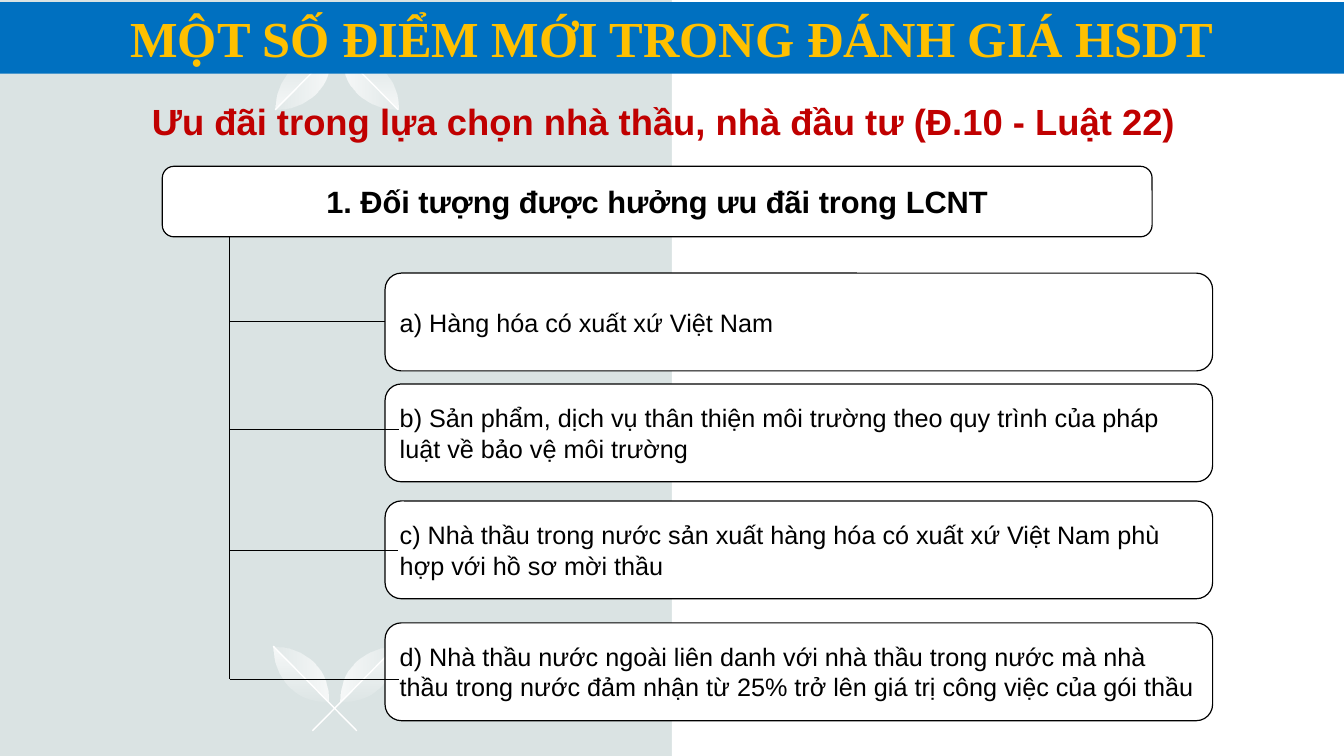
from lxml.etree import SubElement
from pptx import Presentation
from pptx.dml.color import RGBColor
from pptx.enum.shapes import MSO_CONNECTOR as Line, MSO_SHAPE as Shape
from pptx.enum.text import MSO_ANCHOR as Anchor, MSO_AUTO_SIZE as Fit, PP_ALIGN as Align
from pptx.oxml.ns import qn
from pptx.util import Inches, Pt

WIDE, HIGH = 40 / 3, 7.5
TITLE = "MỘT SỐ ĐIỂM MỚI TRONG ĐÁNH GIÁ HSDT"
TOPIC = "Ưu đãi trong lựa chọn nhà thầu, nhà đầu tư (Đ.10 - Luật 22)"
HEAD = "1. Đối tượng được hưởng ưu đãi trong LCNT"
ITEMS = [
    (2.71, 3.19, 3.82, "a) Hàng hóa có xuất xứ Việt Nam"),
    (3.81, 4.26, 3.96, "b) Sản phẩm, dịch vụ thân thiện môi trường theo quy trình "
     "của pháp luật về bảo vệ môi trường"),
    (4.97, 5.46, 3.95, "c) Nhà thầu trong nước sản xuất hàng hóa có xuất xứ Việt Nam "
     "phù hợp với hồ sơ mời thầu"),
    (6.18, 6.74, 3.96, "d) Nhà thầu nước ngoài liên danh với nhà thầu trong nước mà nhà "
     "thầu trong nước đảm nhận từ 25% trở lên giá trị công việc của gói thầu"),
]
LEAF = [(0, 0), (0.14, 0), (0.29, 0.05), (0.4, 0.16),
        (0.51, 0.26), (0.55, 0.41), (0.55, 0.55)]


def paint(part, color):
    """Give a fill, a font or a gradient stop a hex colour."""
    if hasattr(part, "solid"):
        part.solid()
        part.fore_color.rgb = RGBColor.from_string(color)
    else:
        part.color.rgb = RGBColor.from_string(color)


def write(shape, text, size, color="000000", bold=False, align=Align.LEFT,
          font="Arial", anchor=Anchor.MIDDLE):
    """Put one formatted paragraph in a shape."""
    frame = shape.text_frame
    frame.word_wrap = True
    frame.auto_size = Fit.NONE
    frame.vertical_anchor = anchor
    para = frame.paragraphs[0]
    para.text = text
    para.alignment = align
    para.line_spacing = 1.0
    para.font.size, para.font.bold, para.font.name = Pt(size), bold, font
    paint(para.font, color)


def block(slide, box, kind, color, edge=None):
    """Add a filled shape, outlined when an edge colour is given."""
    shape = slide.shapes.add_shape(kind, *map(Inches, box))
    shape.shadow.inherit = False
    paint(shape.fill, color)
    if edge:
        paint(shape.line.fill, edge)
        shape.line.width = Pt(0.85)
    else:
        shape.line.fill.background()
    return shape


def rule(slide, start, end, color="000000", width=0.75):
    """Draw a straight line between two points."""
    line = slide.shapes.add_connector(Line.STRAIGHT, *map(Inches, (*start, *end)))
    paint(line.line.fill, color)
    line.line.width = Pt(width)
    SubElement(line._element.spPr, qn("a:effectLst"))
    return line


def curve(shape):
    """Turn each three straight segments of an outline into one cubic curve."""
    steps = list(shape._element.iter(qn("a:lnTo")))
    for first, *rest in zip(steps[::3], steps[1::3], steps[2::3]):
        cubic = first.makeelement(qn("a:cubicBezTo"))
        first.addprevious(cubic)
        for step in (first, *rest):
            cubic.append(step[0])
            step.getparent().remove(step)


def blade(slide, points, angle, fade):
    """Draw half a leaf in white that fades along an angle."""
    spots = [(Inches(x), Inches(y)) for x, y in points]
    pen = slide.shapes.build_freeform(*spots[0])
    pen.add_line_segments(spots[1:], close=True)
    shape = pen.convert_to_shape()
    curve(shape)
    shape.shadow.inherit = False
    shape.line.fill.background()
    shape.fill.gradient()
    shape.fill.gradient_angle = angle
    for stop in shape.fill.gradient_stops:
        paint(stop, "FFFFFF")
    for tone, alpha in zip(shape._element.iter(qn("a:srgbClr")), (80, fade)):
        SubElement(tone, qn("a:alpha"), val=str(alpha * 1000))
    return shape


def sprig(slide, mid, top, down):
    """Draw two mirrored leaves with crossing stems, tips level with top."""
    parts = []
    for side in (1, -1):
        tip = mid + side * 0.61

        def place(u, v):
            """Map an offset from the leaf tip to the slide."""
            return tip - side * u, top + down * v

        parts += [
            blade(slide, [place(u, v) for u, v in LEAF], 0 if side > 0 else 180, 20),
            blade(slide, [place(v, u) for u, v in LEAF], 270 if down > 0 else 90, 10),
            rule(slide, place(0.83, 0.84), place(0, 0), "FFFFFF", 1),
        ]
    slide.shapes.add_group_shape(parts)


def backdrop(slide, box):
    """Give the layout a grey ground, a white right half and two sprigs."""
    left, top, width, height = box
    layout = slide.slide_layout
    paint(layout.background.fill, "DAE3E3")
    block(slide, (left + width / 2, top, width / 2, height), Shape.RECTANGLE, "FFFFFF")
    sprig(slide, left + 3.32, top + 6.41, 1)
    sprig(slide, left + 3.34, top + 1.09, -1)
    for shape in list(slide.shapes):
        if not shape.is_placeholder:
            for tag in shape._element.iter(qn("p:cNvPr")):
                tag.set("id", str(int(tag.get("id")) + 100))
            layout.shapes._spTree.append(shape._element)


def topic(slide, box):
    """Add the red subtitle."""
    text = slide.shapes.add_textbox(*map(Inches, box))
    write(text, TOPIC, 26, "C00000", True, Align.CENTER, anchor=Anchor.TOP)


def tree(slide, box):
    """Draw the head box, its four items and the lines that join them."""
    left, top, width, _ = box
    head = block(slide, (left, top, 9.82, 0.7), Shape.ROUNDED_RECTANGLE, "FFFFFF", "000000")
    write(head, HEAD, 22, bold=True, align=Align.CENTER)
    inset = 2.21
    for y, _, _, text in ITEMS:
        item = block(slide, (left + inset, y, width - inset, 0.97),
                     Shape.ROUNDED_RECTANGLE, "FFFFFF", "000000")
        write(item, text, 18)
    trunk = left + 0.67
    rule(slide, (trunk, top + 0.7), (trunk, ITEMS[-1][1]))
    for _, y, end, _ in ITEMS:
        rule(slide, (trunk, y), (end, y))


def banner(slide, box):
    """Format the title as a blue band across the top."""
    title = slide.shapes.title
    title.left, title.top, title.width, title.height = map(Inches, box)
    paint(title.fill, "0070C0")
    write(title, TITLE, 36, "FFC000", True, Align.CENTER, "Times New Roman")


def main():
    """Build and save the slide."""
    deck = Presentation()
    deck.slide_width, deck.slide_height = Inches(WIDE), Inches(HIGH)
    slide = deck.slides.add_slide(deck.slide_layouts[5])
    backdrop(slide, (0, 0, WIDE, HIGH))
    topic(slide, (1.23, 0.93, 10.72, 0.54))
    tree(slide, (1.61, 1.65, 10.42, 5.5))
    banner(slide, (0, 0.02, WIDE, 0.71))
    deck.save("out.pptx")


if __name__ == "__main__":
    main()
